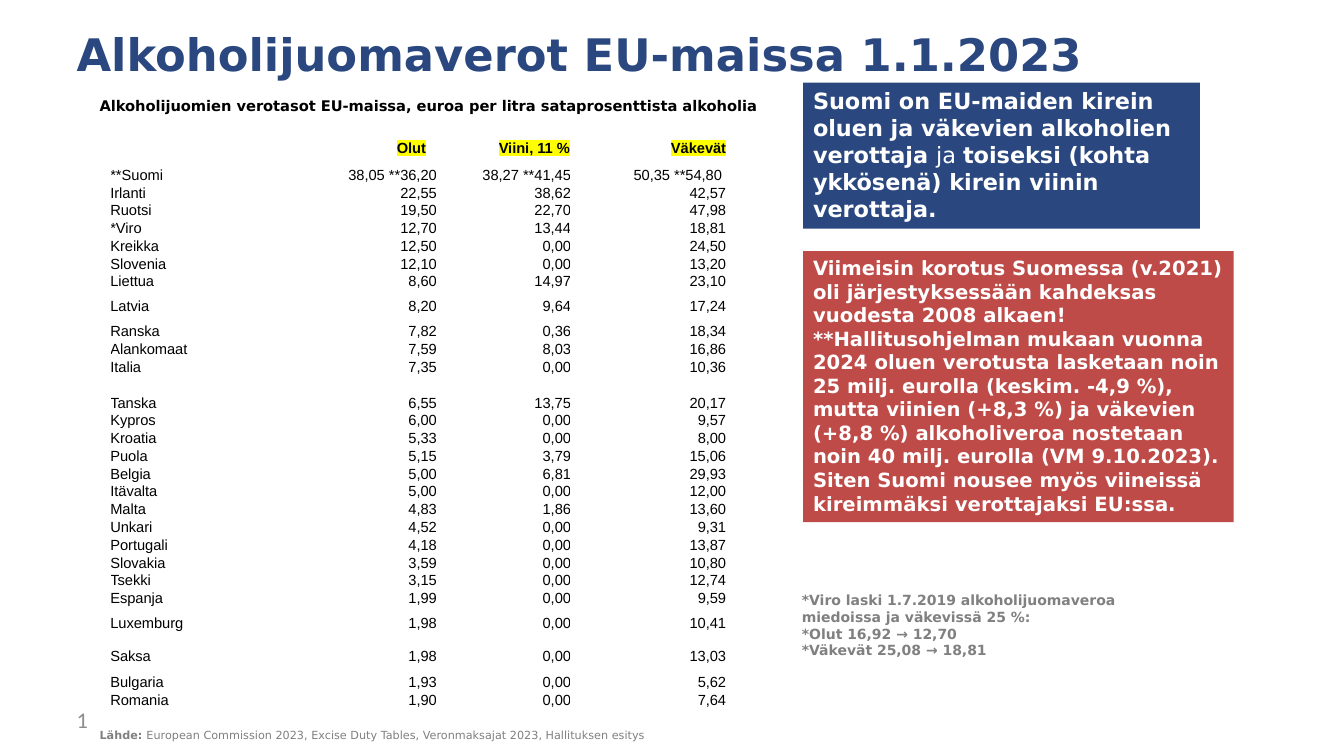
from lxml.etree import SubElement
from pptx import Presentation
from pptx.dml.color import RGBColor
from pptx.enum.shapes import MSO_SHAPE
from pptx.enum.text import MSO_ANCHOR, MSO_AUTO_SIZE, PP_ALIGN
from pptx.oxml.ns import qn
from pptx.util import Cm, Pt

BLUE = RGBColor(0x2A, 0x48, 0x7F)
RED = RGBColor(0xBE, 0x4B, 0x48)
WHITE = RGBColor(0xFF, 0xFF, 0xFF)
BLACK = RGBColor(0, 0, 0)
GRAY = RGBColor(0x80, 0x80, 0x80)
LIGHT_GRAY = RGBColor(0x8C, 0x8C, 0x8C)
HIGHLIGHT = RGBColor(0xFF, 0xFF, 0x00)

HEADINGS = ["", "Olut", "Viini, 11 %", "Väkevät"]
HEADING_INDENTS = [0, 3, 1.56, 0]
COLUMN_WIDTHS = [4.22, 4.01, 3.38, 3.91]
HEADING_HEIGHT = 0.91
ROW_HEIGHT = 0.448
TALL_ROWS = {"Latvia": 0.81, "Luxemburg": 0.81, "Saksa": 0.86}
TAX_ROWS = [
    ("**Suomi", "38,05 **36,20", "38,27 **41,45", "50,35 **54,80 "),
    ("Irlanti", "22,55", "38,62", "42,57"),
    ("Ruotsi", "19,50", "22,70", "47,98"),
    ("*Viro", "12,70", "13,44", "18,81"),
    ("Kreikka", "12,50", "0,00", "24,50"),
    ("Slovenia", "12,10", "0,00", "13,20"),
    ("Liettua", "8,60", "14,97", "23,10"),
    ("Latvia", "8,20", "9,64", "17,24"),
    ("Ranska", "7,82", "0,36", "18,34"),
    ("Alankomaat", "7,59", "8,03", "16,86"),
    ("Italia", "7,35", "0,00", "10,36"),
    ("", "", "", ""),
    ("Tanska", "6,55", "13,75", "20,17"),
    ("Kypros", "6,00", "0,00", "9,57"),
    ("Kroatia", "5,33", "0,00", "8,00"),
    ("Puola", "5,15", "3,79", "15,06"),
    ("Belgia", "5,00", "6,81", "29,93"),
    ("Itävalta", "5,00", "0,00", "12,00"),
    ("Malta", "4,83", "1,86", "13,60"),
    ("Unkari", "4,52", "0,00", "9,31"),
    ("Portugali", "4,18", "0,00", "13,87"),
    ("Slovakia", "3,59", "0,00", "10,80"),
    ("Tsekki", "3,15", "0,00", "12,74"),
    ("Espanja", "1,99", "0,00", "9,59"),
    ("Luxemburg", "1,98", "0,00", "10,41"),
    ("Saksa", "1,98", "0,00", "13,03"),
    ("Bulgaria", "1,93", "0,00", "5,62"),
    ("Romania", "1,90", "0,00", "7,64"),
]

BLUE_MESSAGE = [[
    ("Suomi on EU-maiden kirein oluen ja väkevien alkoholien verottaja ", True),
    ("ja ", False),
    ("toiseksi (kohta ykkösenä) kirein viinin verottaja.", True),
]]
RED_MESSAGE = [
    [("Viimeisin korotus Suomessa (v.2021) oli järjestyksessään kahdeksas "
      "vuodesta 2008 alkaen!", True)],
    [("**Hallitusohjelman mukaan vuonna 2024 oluen verotusta lasketaan noin "
      "25 milj. eurolla (keskim. -4,9 %), mutta viinien (+8,3 %) ja väkevien "
      "(+8,8 %) alkoholiveroa nostetaan noin 40 milj. eurolla (VM 9.10.2023). "
      "Siten Suomi nousee myös viineissä kireimmäksi verottajaksi EU:ssa.", True)],
]
ESTONIA_NOTE = [
    [("*Viro laski 1.7.2019 alkoholijuomaveroa miedoissa ja väkevissä 25 %:", True)],
    [("*Olut 16,92 → 12,70", True)],
    [("*Väkevät 25,08 → 18,81", True)],
]
SOURCE_LINE = [[
    ("Lähde: ", True),
    ("European Commission 2023, Excise Duty Tables, Veronmaksajat 2023, "
     "Hallituksen esitys", False),
]]


def style_paragraph(paragraph, size, color, name="DejaVu Sans", bold=None):
    font = paragraph.font
    font.size, font.name, font.bold = Pt(size), name, bold
    font.color.rgb = color


def fill_text(frame, paragraphs, size, color):
    """Write paragraphs given as lists of (text, bold) runs."""
    frame.word_wrap = True
    for index, runs in enumerate(paragraphs):
        paragraph = frame.add_paragraph() if index else frame.paragraphs[0]
        paragraph.alignment = PP_ALIGN.LEFT
        same_weight = len(runs) == 1
        style_paragraph(paragraph, size, color, bold=runs[0][1] if same_weight else None)
        for text, bold in runs:
            run = paragraph.add_run()
            run.text = text
            if not same_weight:
                run.font.bold = bold


def add_text(slide, box, paragraphs, size, color):
    frame = slide.shapes.add_textbox(*map(Cm, box)).text_frame
    fill_text(frame, paragraphs, size, color)


def add_message(slide, box, paragraphs, size, fill):
    shape = slide.shapes.add_shape(MSO_SHAPE.RECTANGLE, *map(Cm, box))
    shape.shadow.inherit = False
    shape.fill.solid()
    shape.fill.fore_color.rgb = fill
    shape.line.fill.background()
    frame = shape.text_frame
    frame.vertical_anchor = MSO_ANCHOR.TOP
    fill_text(frame, paragraphs, size, WHITE)
    frame.auto_size = MSO_AUTO_SIZE.SHAPE_TO_FIT_TEXT


def add_slide_number(slide, box):
    frame = slide.shapes.add_textbox(*map(Cm, box)).text_frame
    frame.word_wrap = True
    frame.vertical_anchor = MSO_ANCHOR.MIDDLE
    paragraph = frame.paragraphs[0]
    style_paragraph(paragraph, 16, LIGHT_GRAY, "Calibri")
    field = SubElement(paragraph._p, qn("a:fld"), type="slidenum",
                       id="{B6F15528-21DE-4FAA-801E-634DDDAF4B2B}")
    SubElement(field, qn("a:rPr"), lang="fi-FI")
    SubElement(field, qn("a:t")).text = "1"


def fill_cell(cell, text, align, heading=False, indent=0):
    cell.fill.background()
    cell.margin_left = Cm(indent)
    cell.margin_right = cell.margin_top = cell.margin_bottom = 0
    cell.vertical_anchor = MSO_ANCHOR.MIDDLE
    paragraph = cell.text_frame.paragraphs[0]
    paragraph.alignment = align
    style_paragraph(paragraph, 10.5, BLACK, "Arial", heading)
    if not text:
        SubElement(paragraph._p, qn("a:endParaRPr"), sz="1050")
        return
    run = paragraph.add_run()
    run.text = text
    if heading:
        highlight = SubElement(run._r.get_or_add_rPr(), qn("a:highlight"))
        SubElement(highlight, qn("a:srgbClr"), val=str(HIGHLIGHT))


def add_tax_table(slide, left, top):
    heights = [HEADING_HEIGHT] + [TALL_ROWS.get(row[0], ROW_HEIGHT) for row in TAX_ROWS]
    table = slide.shapes.add_table(
        len(heights), len(COLUMN_WIDTHS), Cm(left), Cm(top),
        Cm(sum(COLUMN_WIDTHS)), Cm(sum(heights))).table
    table.first_row = table.horz_banding = False
    for column, width in zip(table.columns, COLUMN_WIDTHS):
        column.width = Cm(width)
    for row, height in zip(table.rows, heights):
        row.height = Cm(height)
    last = len(HEADINGS) - 1
    for index, (heading, indent) in enumerate(zip(HEADINGS, HEADING_INDENTS)):
        align = PP_ALIGN.RIGHT if index == last else PP_ALIGN.LEFT
        fill_cell(table.cell(0, index), heading, align, True, indent)
    for row_index, values in enumerate(TAX_ROWS, 1):
        for index, value in enumerate(values):
            align = PP_ALIGN.RIGHT if index else PP_ALIGN.LEFT
            fill_cell(table.cell(row_index, index), value, align)


def build_tax_slide(presentation):
    slide = presentation.slides.add_slide(presentation.slide_layouts[6])
    add_text(slide, (1.68, 0.54, 30.5, 2.29),
             [[("Alkoholijuomaverot EU-maissa 1.1.2023", True)]], 32, BLUE)
    add_slide_number(slide, (1.68, 17.63, 7.9, 1.02))
    add_message(slide, (20.24, 2.08, 10, 3.68), BLUE_MESSAGE, 16, BLUE)
    add_message(slide, (20.24, 6.33, 10.85, 6.83), RED_MESSAGE, 14, RED)
    add_text(slide, (19.96, 14.78, 10, 2.69), ESTONIA_NOTE, 10, GRAY)
    add_text(slide, (2.26, 18.24, 17.4, 0.6), SOURCE_LINE, 8, GRAY)
    add_text(slide, (2.26, 2.31, 17.4, 0.71),
             [[("Alkoholijuomien verotasot EU-maissa, euroa per litra "
                "sataprosenttista alkoholia", True)]], 10.5, BLACK)
    add_tax_table(slide, 2.78, 3.28)


def main():
    presentation = Presentation()
    presentation.slide_width, presentation.slide_height = Cm(33.87), Cm(19.05)
    build_tax_slide(presentation)
    presentation.save("out.pptx")


if __name__ == "__main__":
    main()
